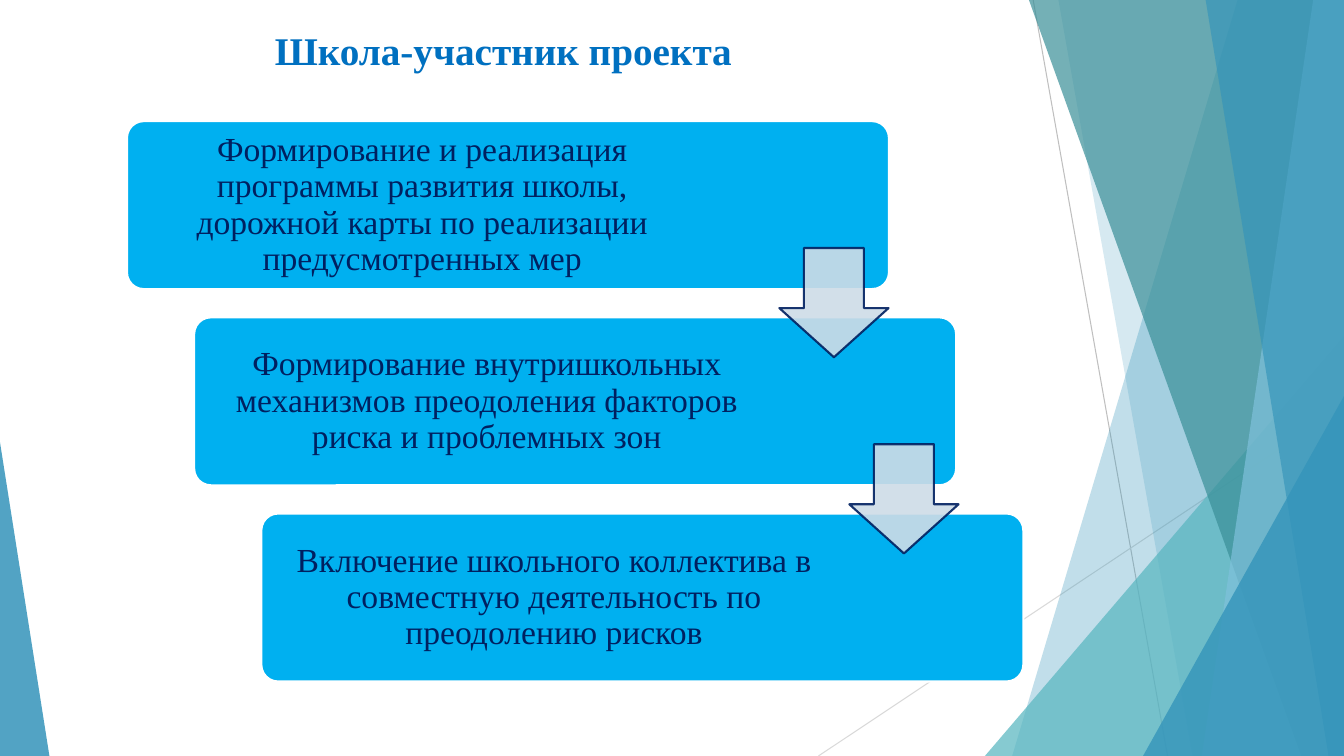
from dataclasses import dataclass

from lxml import etree
from pptx import Presentation
from pptx import util as u
from pptx.dml.color import RGBColor
from pptx.enum import shapes, text
from pptx.oxml import ns

Pt = u.Pt
GEO = shapes.MSO_SHAPE


@dataclass(frozen=True)
class Theme:
    font: str = "Times New Roman"
    title_size: float = 28
    step_size: float = 24
    title: str = "0070C0"
    ink: str = "002060"
    step: str = "00B0F0"
    edge: str = "FFFFFF"
    arrow: str = "CEDCE7"
    blue: str = "3494BA"
    sky: str = "7FC1DB"
    aqua: str = "58B6C0"
    teal: str = "3A8F98"
    ray_dark: str = "BFBFBF"
    ray_light: str = "D9D9D9"
    line: float = 1.5
    ray: float = 0.75


T = Theme()
W, H = 960, 540
STEPS = [
    "Формирование и реализация программы развития школы, "
    "дорожной карты по реализации предусмотренных мер",
    "Формирование внутришкольных механизмов преодоления факторов риска "
    "и проблемных зон",
    "Включение школьного коллектива в совместную деятельность "
    "по преодолению рисков",
]


def set_color(fill, color, opacity=100):
    fill.solid()
    fill.fore_color.rgb = RGBColor.from_string(color)
    if opacity < 100:
        for clr in fill._xPr.iter(ns.qn("a:srgbClr")):
            etree.SubElement(clr, ns.qn("a:alpha"), val=str(opacity * 1000))


def paint(sp, color, opacity=100, line=None, line_opacity=100):
    sp.shadow.inherit = False
    set_color(sp.fill, color, opacity)
    if line:
        sp.line.width = Pt(T.line)
        set_color(sp.line.fill, line, line_opacity)
    else:
        sp.line.fill.background()


def add_preset(s, geo, box, adj, **style):
    sp = s.shapes.add_shape(geo, *map(Pt, box))
    for i, value in enumerate(adj):
        sp.adjustments[i] = value
    paint(sp, **style)


def add_polygon(s, points, **style):
    (x, y), *rest = [(Pt(px), Pt(py)) for px, py in points]
    builder = s.shapes.build_freeform(x, y)
    builder.add_line_segments(rest, close=True)
    paint(builder.convert_to_shape(), **style)


def add_ray(s, start, end, color):
    c = s.shapes.add_connector(
        shapes.MSO_CONNECTOR.STRAIGHT, *map(Pt, (*start, *end)))
    c.line.width = Pt(T.ray)
    set_color(c.line.fill, color)
    etree.SubElement(c._element.spPr, ns.qn("a:effectLst"))


def add_text(s, box, content, size, color, bold=False, spacing=None,
             anchor=text.MSO_ANCHOR.TOP, inset=None, grow=False):
    tf = s.shapes.add_textbox(*map(Pt, box)).text_frame
    tf.word_wrap = True
    tf.vertical_anchor = anchor
    if grow:
        tf.auto_size = text.MSO_AUTO_SIZE.SHAPE_TO_FIT_TEXT
    if inset is not None:
        tf.margin_left = tf.margin_right = Pt(inset)
        tf.margin_top = tf.margin_bottom = Pt(inset)
    p = tf.paragraphs[0]
    p.alignment = text.PP_ALIGN.CENTER
    if spacing:
        p.line_spacing = spacing
    r = p.add_run()
    r.text = content
    r.font.name = T.font
    r.font.size = Pt(size)
    r.font.bold = bold
    r.font.color.rgb = RGBColor.from_string(color)


def draw_backdrop(s, x, y, w, h):
    """Translucent facets along the right edge and one in the left corner."""
    right, bottom = x + w, y + h

    def facet(top, foot, color, opacity):
        add_polygon(s, [(right - top, y), (right, y), (right, bottom),
                        (right - foot, bottom)], color=color, opacity=opacity)

    def corner(left, width, height, apex, color, opacity):
        add_preset(s, GEO.ISOSCELES_TRIANGLE,
                   (left, bottom - height, width, height), [apex],
                   color=color, opacity=opacity)

    add_ray(s, (right - 222, y), (right - 126, bottom), T.ray_dark)
    add_ray(s, (right, bottom - 250), (right - 375.4, bottom), T.ray_light)
    facet(76, 237, T.blue, 30)
    facet(204, 108, T.blue, 20)
    corner(right - 256.5, 256.5, 300, 1, T.aqua, 72)
    facet(225, 30.5, T.teal, 70)
    facet(22, 101.5, T.sky, 70)
    facet(98.8, 11, T.blue, 65)
    corner(right - 143.5, 143.5, 257, 1, T.blue, 80)
    corner(x, 35.3, 224, 0, T.blue, 85)


def draw_steps(s, x, y, w, h):
    """Staircase of boxes, with an arrow bridging each pair."""
    box_w, box_h, pad, arrow = 544.3, 120, 3.5, 78
    last = len(STEPS) - 1
    dx, dy = (w - box_w) / last, (h - box_h) / last
    for i, content in enumerate(STEPS):
        left, top = x + i * dx, y + i * dy
        add_preset(s, GEO.ROUNDED_RECTANGLE, (left, top, box_w, box_h), [0.1],
                   color=T.step, line=T.edge)
        text_w = 411 if i else 414.7
        add_text(s, (left + pad, top + pad, text_w, box_h - 2 * pad), content,
                 T.step_size, T.ink, spacing=0.9, inset=7.2,
                 anchor=text.MSO_ANCHOR.MIDDLE)
    for i in range(last):
        add_preset(s, GEO.DOWN_ARROW,
                   (x + 466 + i * 50, y + 90.7 + i * dy, arrow, arrow),
                   [0.55, 0.45], color=T.arrow, opacity=90,
                   line=T.ink, line_opacity=90)


def main():
    prs = Presentation()
    prs.slide_width, prs.slide_height = Pt(W), Pt(H)
    s = prs.slides.add_slide(prs.slide_layouts[6])
    draw_backdrop(s, 0, 0, W, H)
    add_text(s, (54, 15, 611, 41), "Школа-участник проекта",
             T.title_size, T.title, bold=True, grow=True)
    draw_steps(s, 90.7, 86.5, 640.3, 400.3)
    prs.save("out.pptx")


if __name__ == "__main__":
    main()
